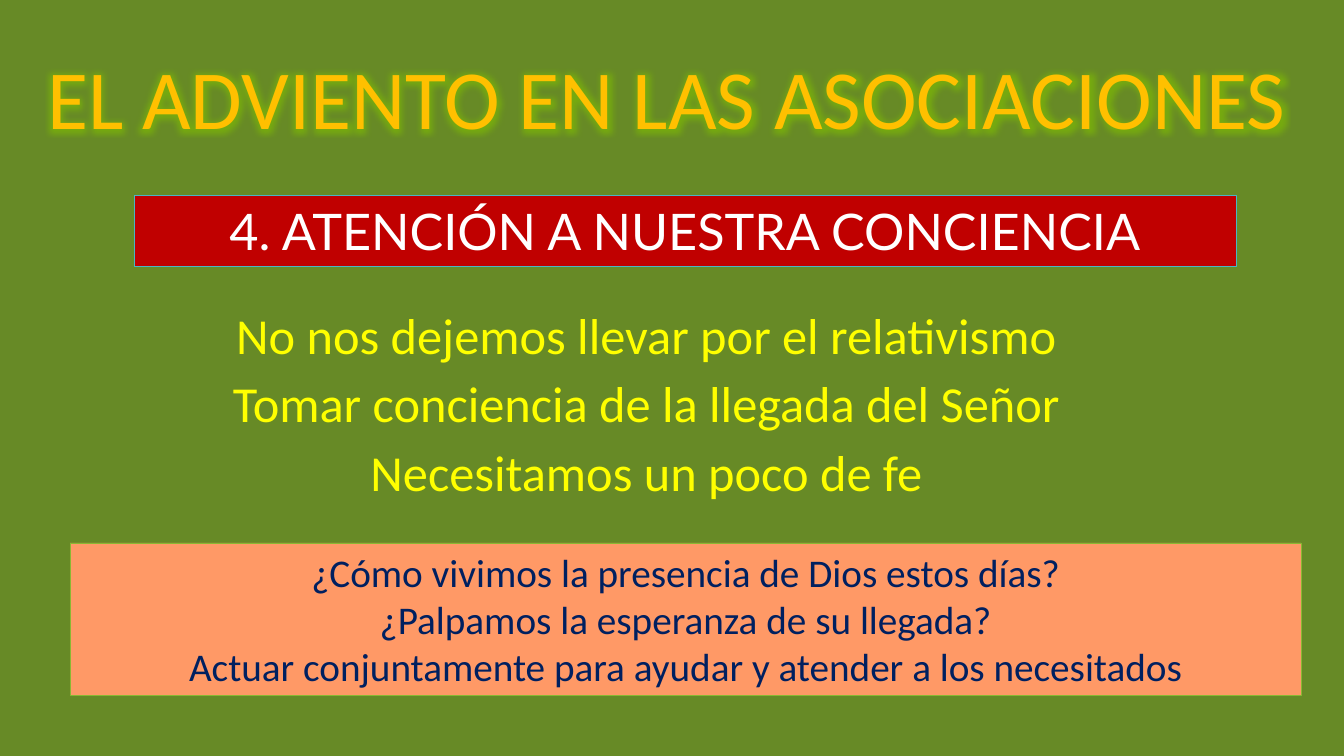
from lxml import etree
from pptx import Presentation
from pptx import util as u
from pptx.dml.color import RGBColor
from pptx.enum import shapes, text
from pptx.oxml import ns

PX = u.Inches(13.333333) / 1344  # EMU per px


def px(n):
    return u.Emu(round(n * PX))


def rgb(value):
    return RGBColor.from_string(value)


def place(sp, box):
    sp.left, sp.top, sp.width, sp.height = map(px, box)


def write(sp, lines, size, color, font="Calibri", anchor=text.MSO_ANCHOR.TOP,
          spacing=1.0, before=0):
    """Fill a shape with centred paragraphs, one run each."""
    tf = sp.text_frame
    tf.word_wrap = True
    tf.auto_size = text.MSO_AUTO_SIZE.NONE
    tf.vertical_anchor = anchor
    for i, line in enumerate(lines):
        p = tf.add_paragraph() if i else tf.paragraphs[0]
        p.alignment = text.PP_ALIGN.CENTER
        p.line_spacing = spacing
        p.space_before = u.Pt(before)
        r = p.add_run()
        r.text = line
        r.font.size = u.Pt(size)
        r.font.name = font
        r.font.color.rgb = rgb(color)


def add_glow(r, color, radius, alpha):
    effects = etree.Element(ns.qn("a:effectLst"))
    glow = etree.SubElement(effects, ns.qn("a:glow"), rad=str(u.Pt(radius)))
    clr = etree.SubElement(glow, ns.qn("a:srgbClr"), val=color)
    etree.SubElement(clr, ns.qn("a:alpha"), val=str(alpha * 1000))
    r.font._element.find(ns.qn("a:solidFill")).addnext(effects)


def add_title(s, box, line):
    sp = s.shapes.title
    place(sp, box)
    write(sp, [line], 60, "FFC000", anchor=text.MSO_ANCHOR.BOTTOM, spacing=0.9)
    add_glow(sp.text_frame.paragraphs[0].runs[0], "80C000", 10, 60)


def add_messages(s, box, lines):
    sp = s.shapes.add_textbox(*map(px, box))
    write(sp, lines, 36, "FFFF00", spacing=0.9, before=10)


def add_panel(s, box, lines, size, color, fill, line, font="Calibri"):
    sp = s.shapes.add_shape(shapes.MSO_SHAPE.RECTANGLE, *map(px, box))
    sp.shadow.inherit = False
    sp.fill.solid()
    sp.fill.fore_color.rgb = rgb(fill)
    sp.line.color.rgb = rgb(line)
    sp.line.width = u.Pt(0.5)
    write(sp, lines, size, color, font)


def main():
    prs = Presentation()
    prs.slide_width, prs.slide_height = px(1344), px(756)
    s = prs.slides.add_slide(prs.slide_layouts[5])
    s.background.fill.solid()
    s.background.fill.fore_color.rgb = rgb("678A26")

    # Title and messages
    add_title(s, (33, 32, 1267, 121), "EL ADVIENTO EN LAS ASOCIACIONES")
    add_messages(s, (33, 306, 1227, 213), [
        "No nos dejemos llevar por el relativismo",
        "Tomar conciencia de la llegada del Señor",
        "Necesitamos un poco de fe",
    ])

    # Theme banner and questions
    add_panel(s, (134, 195, 1102, 71), ["4. ATENCIÓN A NUESTRA CONCIENCIA"],
              36, "FFFFFF", "C00000", "4AB5C4", font="Lato")
    add_panel(s, (70, 543, 1231, 152), [
        "¿Cómo vivimos la presencia de Dios estos días?",
        "¿Palpamos la esperanza de su llegada?",
        "Actuar conjuntamente para ayudar y atender a los necesitados",
    ], 28, "002060", "FF9966", "8AB833")

    prs.save("out.pptx")


if __name__ == "__main__":
    main()
